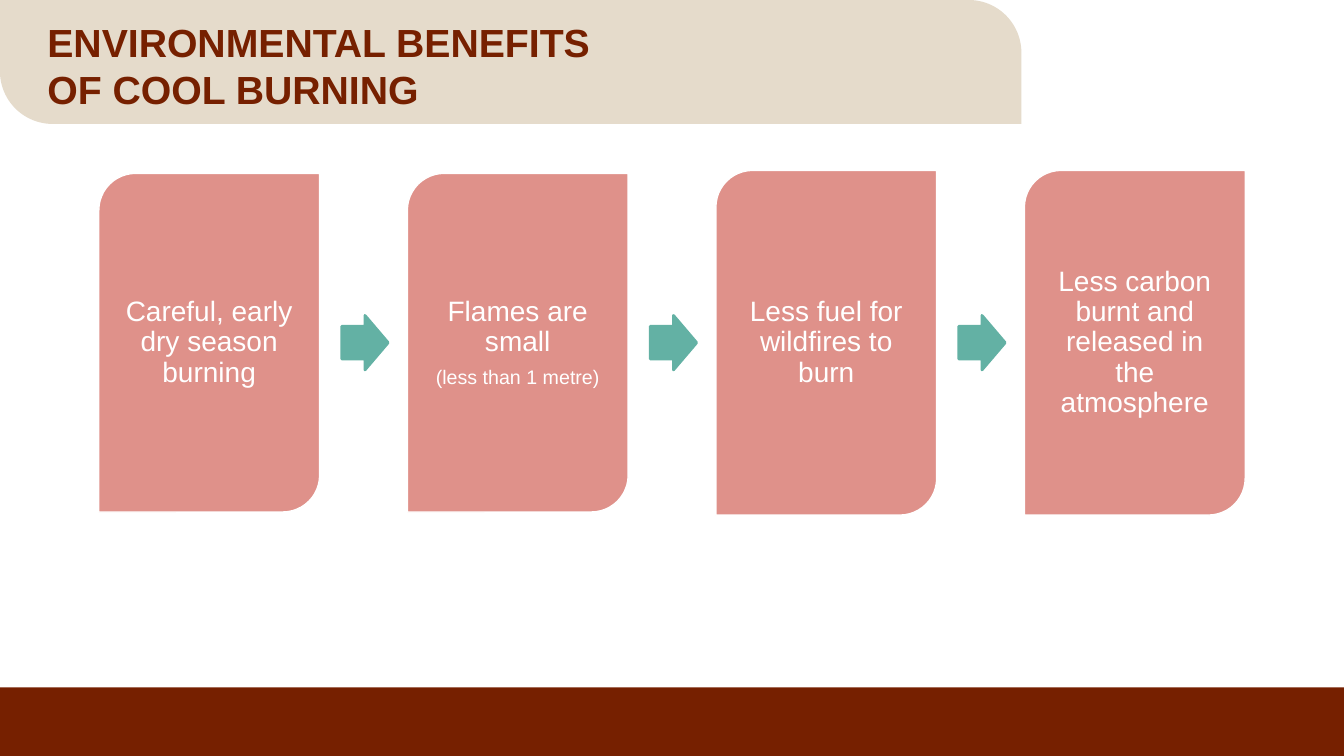
import pptx
import pptx.dml.color
import pptx.enum.shapes
import pptx.enum.text
import pptx.util

COLORS = {"brown": "762000", "sand": "E5DBCB", "rose": "DF918A", "teal": "63B1A4", "white": "FFFFFF"}
SHAPES = pptx.enum.shapes.MSO_SHAPE
ALIGN = pptx.enum.text.PP_ALIGN
WIDTH, HEIGHT = 13.33, 7.5
CARD_WIDTH, PITCH, ARROW_OFFSET = 2.19, 3.06, 2.41
STEPS = [
    (3.36, [("Careful, early dry season burning", 20)]),
    (3.36, [("Flames are small", 20), ("(less than 1 metre)", 14)]),
    (3.42, [("Less fuel for wildfires to burn", 20)]),
    (3.42, [("Less carbon burnt and released in the atmosphere", 20)]),
]


def color(name):
    """Return the named palette color."""
    return pptx.dml.color.RGBColor.from_string(COLORS[name])


def set_values(target, values):
    """Set every attribute in a dict of format values."""
    for name, value in values.items():
        setattr(target, name, value)


def place(target, box):
    """Move a shape to a box given in inches."""
    names = ("left", "top", "width", "height")
    set_values(target, dict(zip(names, map(pptx.util.Inches, box))))


def add_block(page, kind, box, fill, line=None, weight=1, adjustments=()):
    """Add a flat filled shape, outlined only when a line color is given."""
    block = page.shapes.add_shape(kind, *map(pptx.util.Inches, box))
    block.shadow.inherit = False
    block.fill.solid()
    block.fill.fore_color.rgb = color(fill)
    for index, value in enumerate(adjustments):
        block.adjustments[index] = value
    if line:
        block.line.color.rgb = color(line)
        block.line.width = pptx.util.Pt(weight)
    else:
        block.line.fill.background()
    return block


def write(frame, paragraphs, format_values, margins, ink, bold=False):
    """Fill a middle-anchored text frame with sized paragraphs."""
    set_values(frame, {
        "word_wrap": True,
        "auto_size": pptx.enum.text.MSO_AUTO_SIZE.NONE,
        "vertical_anchor": pptx.enum.text.MSO_ANCHOR.MIDDLE,
    })
    set_values(frame, {f"margin_{side}": pptx.util.Inches(size) for side, size in margins.items()})
    for index, (text, size) in enumerate(paragraphs):
        para = frame.add_paragraph() if index else frame.paragraphs[0]
        para.text = text
        set_values(para, format_values)
        set_values(para.font, {"name": "Arial", "size": pptx.util.Pt(size), "bold": bold})
        para.font.color.rgb = color(ink)


def add_header(page, box):
    """Place the sand banner with the slide title on it."""
    left, top, width, height = box
    banner = add_block(page, SHAPES.ROUND_2_DIAG_RECTANGLE, box, "sand", adjustments=(0, 0.425))
    title = page.shapes.title
    title.element.addprevious(banner.element)
    place(title, (left + 0.37, top + 0.21, width - 0.76, height - 0.36))
    write(title.text_frame, [("ENVIRONMENTAL BENEFITS\vOF COOL BURNING", 28)],
          {"alignment": ALIGN.LEFT}, {"left": 0.1, "right": 0.1, "top": 0.05, "bottom": 0.05},
          "brown", True)


def add_process(page, left, middle):
    """Lay out the step cards, joined by arrows, around a middle line."""
    card_format = {"alignment": ALIGN.CENTER, "line_spacing": 0.9, "space_after": pptx.util.Pt(7)}
    margins = dict.fromkeys(("left", "right", "top", "bottom"), 0.08)
    for index, (height, paragraphs) in enumerate(STEPS):
        x = left + index * PITCH
        card = add_block(page, SHAPES.ROUND_2_DIAG_RECTANGLE,
                         (x, middle - height / 2, CARD_WIDTH, height), "rose", "white")
        write(card.text_frame, paragraphs, card_format, margins, "white")
        if index < len(STEPS) - 1:
            add_block(page, SHAPES.RIGHT_ARROW, (x + ARROW_OFFSET, middle - 0.27, 0.46, 0.54),
                      "teal", "teal", 2, (0.6, 0.5))


def main():
    """Build and save the slide."""
    deck = pptx.Presentation()
    deck.slide_width = pptx.util.Inches(WIDTH)
    deck.slide_height = pptx.util.Inches(HEIGHT)
    page = deck.slides.add_slide(deck.slide_layouts[5])
    add_block(page, SHAPES.RECTANGLE, (0, HEIGHT - 0.68, WIDTH, 0.68), "brown")
    add_header(page, (0, 0, 0.76 * WIDTH, 1.23))
    add_process(page, 0.98, 3.4)
    deck.save("out.pptx")


if __name__ == "__main__":
    main()
